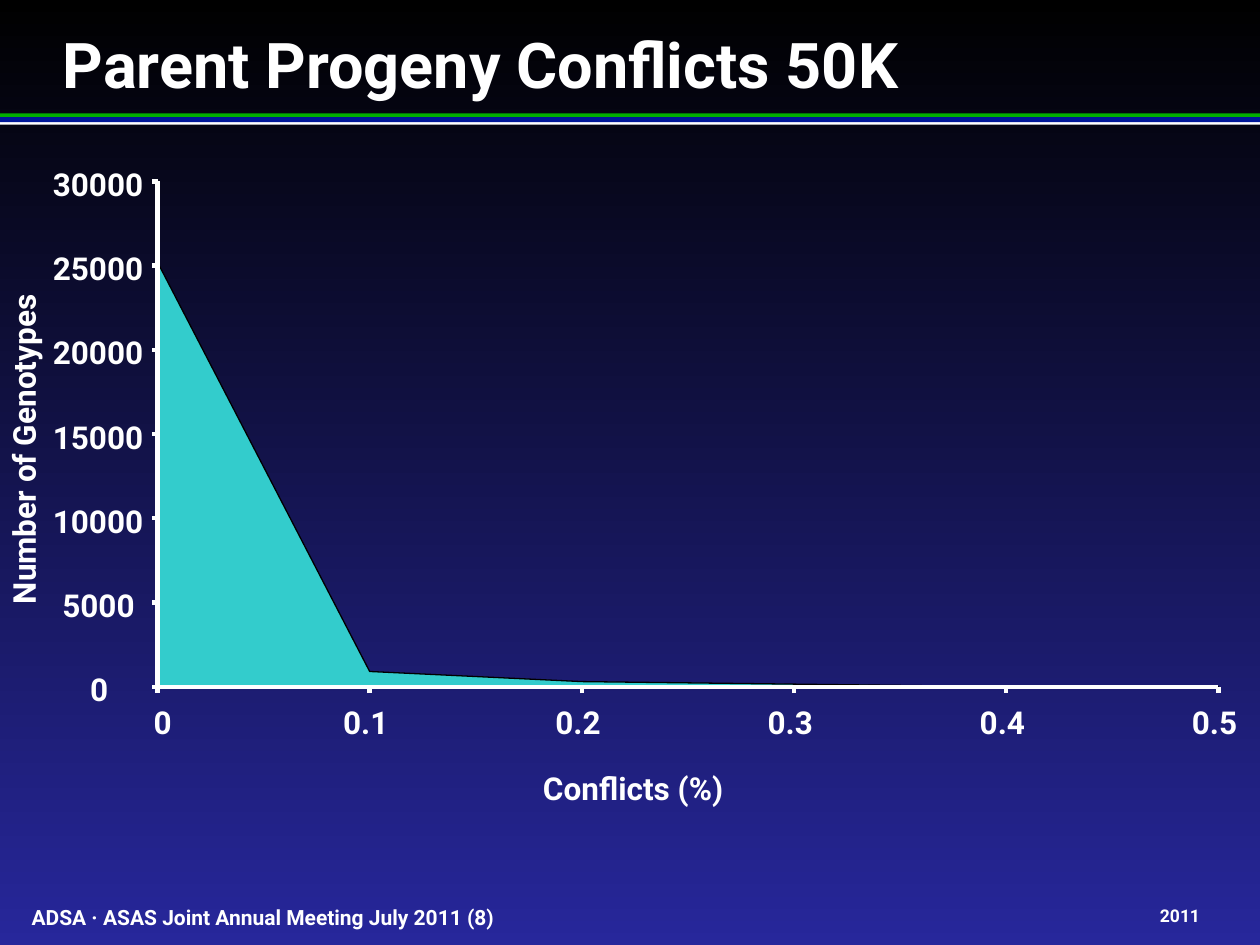
from dataclasses import dataclass

from lxml import etree
from pptx import Presentation
from pptx import util as u
from pptx.dml.color import RGBColor
from pptx.enum import shapes, text
from pptx.oxml.ns import qn

BLACK = RGBColor(0x00, 0x00, 0x00)
NAVY = RGBColor(0x27, 0x27, 0x9B)
GREEN = RGBColor(0x01, 0xAF, 0x00)
BLUE = RGBColor(0x00, 0x17, 0x99)
WHITE = RGBColor(0xFF, 0xFF, 0xFF)
TURQUOISE = RGBColor(0x33, 0xCC, 0xCC)
FONT = "Roboto"

AXIS_LEFT, AXIS_RIGHT = 1.25, 9.67
AXIS_TOP, AXIS_BOTTOM = 1.44, 5.45
CONFLICT_MAX, GENOTYPE_MAX = 0.5, 30000
GENOTYPES = (25200, 900, 300, 150, 0, 0)
CONFLICTS = ("0", "0.1", "0.2", "0.3", "0.4", "0.5")
GENOTYPE_STEP = 5000
LABEL_HEIGHT = 0.3
GENOTYPE_LABEL_WIDTHS = {1: 0.15, 4: 0.59, 5: 0.74}


@dataclass(frozen=True)
class Stripe:
    top: float
    height: float
    color: RGBColor


@dataclass(frozen=True)
class Segment:
    x1: float
    y1: float
    x2: float
    y2: float


STRIPES = (
    Stripe(0.9, 0.03, GREEN),
    Stripe(0.96, 0.03, WHITE),
    Stripe(0.93, 0.04, BLUE),
)


def conflict_x(conflict: float) -> float:
    return AXIS_LEFT + (AXIS_RIGHT - AXIS_LEFT) * conflict / CONFLICT_MAX


def genotype_y(count: float) -> float:
    return AXIS_BOTTOM - (AXIS_BOTTOM - AXIS_TOP) * count / GENOTYPE_MAX


def paint_background(slide) -> None:
    fill = slide.background.fill
    fill.gradient()
    fill.gradient_angle = 270
    for stop, color in zip(fill.gradient_stops, (BLACK, NAVY)):
        stop.color.rgb = color


def draw_stripe(slide, stripe: Stripe) -> None:
    band = slide.shapes.add_shape(
        shapes.MSO_SHAPE.RECTANGLE, 0, u.Inches(stripe.top), u.Inches(10), u.Inches(stripe.height)
    )
    band.shadow.inherit = False
    band.fill.solid()
    band.fill.fore_color.rgb = stripe.color
    band.line.fill.background()


def draw_segment(slide, segment: Segment) -> None:
    rule = slide.shapes.add_connector(
        shapes.MSO_CONNECTOR.STRAIGHT,
        u.Inches(segment.x1),
        u.Inches(segment.y1),
        u.Inches(segment.x2),
        u.Inches(segment.y2),
    )
    rule.line.color.rgb = WHITE
    rule.line.width = u.Pt(2.5)
    etree.SubElement(rule._element.spPr, qn("a:effectLst"))


def draw_area(slide, filled: bool) -> None:
    xs = [conflict_x(float(conflict)) for conflict in CONFLICTS]
    curve = [(x, genotype_y(count)) for x, count in zip(xs, GENOTYPES)]
    baseline = [(x, AXIS_BOTTOM) for x in reversed(xs)]
    corners = [(u.Inches(x), u.Inches(y)) for x, y in curve + baseline]
    builder = slide.shapes.build_freeform(u.Inches(AXIS_LEFT), u.Inches(AXIS_BOTTOM))
    builder.add_line_segments(corners, close=filled)
    area = builder.convert_to_shape()
    area.shadow.inherit = False
    if filled:
        area.fill.solid()
        area.fill.fore_color.rgb = TURQUOISE
        area.line.fill.background()
    else:
        area.fill.background()
        area.line.color.rgb = BLACK
        area.line.width = u.Pt(0.75)


def write(
    slide,
    words: str,
    left: float,
    top: float,
    width: float,
    height: float = LABEL_HEIGHT,
    *,
    size: float = 18,
    wrap: bool = False,
    anchor=text.MSO_ANCHOR.TOP,
    align=text.PP_ALIGN.LEFT,
    rotation: float = 0,
) -> None:
    box = slide.shapes.add_textbox(u.Inches(left), u.Inches(top), u.Inches(width), u.Inches(height))
    box.rotation = rotation
    frame = box.text_frame
    frame.margin_left = frame.margin_right = frame.margin_top = frame.margin_bottom = 0
    frame.word_wrap = wrap
    frame.auto_size = text.MSO_AUTO_SIZE.SHAPE_TO_FIT_TEXT
    frame.vertical_anchor = anchor
    paragraph = frame.paragraphs[0]
    paragraph.alignment = align
    run = paragraph.add_run()
    run.text = words
    run.font.name = FONT
    run.font.size = u.Pt(size)
    run.font.bold = True
    run.font.color.rgb = WHITE


def draw_genotype_axis(slide) -> None:
    draw_segment(slide, Segment(AXIS_LEFT, AXIS_TOP, AXIS_LEFT, AXIS_BOTTOM))
    for count in range(0, GENOTYPE_MAX + 1, GENOTYPE_STEP):
        y = genotype_y(count)
        draw_segment(slide, Segment(AXIS_LEFT - 0.04, y, AXIS_LEFT, y))
        width = GENOTYPE_LABEL_WIDTHS[len(str(count))]
        write(slide, str(count), 0.79 - width / 2, y - 0.13, width)


def draw_conflict_axis(slide) -> None:
    draw_segment(slide, Segment(AXIS_LEFT, AXIS_BOTTOM, AXIS_RIGHT, AXIS_BOTTOM))
    for conflict in CONFLICTS:
        x = conflict_x(float(conflict))
        draw_segment(slide, Segment(x, AXIS_BOTTOM + 0.05, x, AXIS_BOTTOM))
        offset, width = (0.03, 0.15) if conflict == "0" else (0.21, 0.37)
        write(slide, conflict, x - offset, 5.58, width)


def main() -> None:
    deck = Presentation()
    deck.slide_width, deck.slide_height = u.Inches(10), u.Inches(7.5)
    slide = deck.slides.add_slide(deck.slide_layouts[6])
    middle = text.MSO_ANCHOR.MIDDLE

    paint_background(slide)
    for stripe in STRIPES:
        draw_stripe(slide, stripe)
    write(slide, "ADSA · ASAS Joint Annual Meeting July 2011 (8)", 0.25, 7.18, 5.81, 0.2,
          size=12, wrap=True, anchor=middle)
    write(slide, "2011", 9.06, 7.18, 0.61, 0.17,
          size=10, wrap=True, anchor=middle, align=text.PP_ALIGN.CENTER)
    write(slide, "Parent Progeny Conflicts 50K", 0.5, 0.2, 9, 0.6, size=36, wrap=True)

    for filled in (True, False):
        draw_area(slide, filled)
    draw_genotype_axis(slide)
    draw_conflict_axis(slide)
    write(slide, "Conflicts (%)", 4.31, 6.1, 1.53)
    write(slide, "Number of Genotypes", -1.14, 3.32, 2.65, rotation=270)

    deck.save("out.pptx")


if __name__ == "__main__":
    main()
